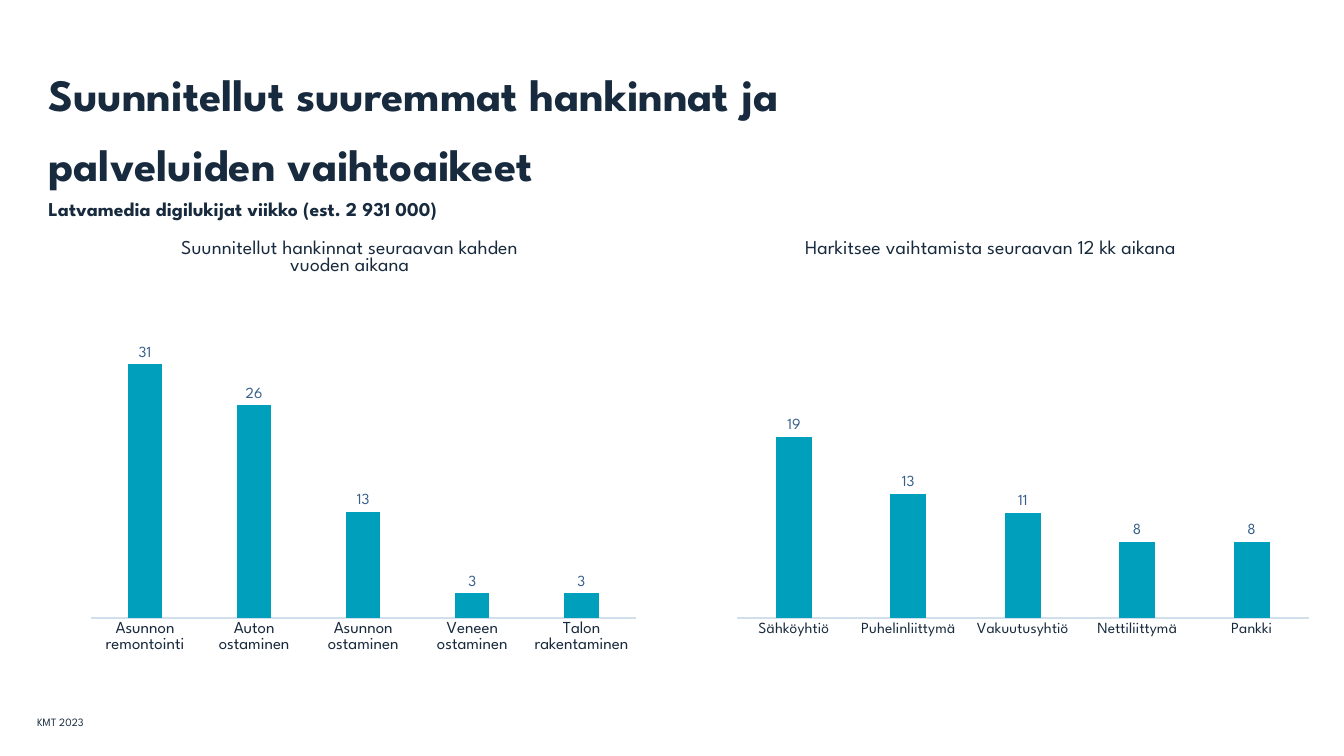
from lxml import etree
from pptx import Presentation
from pptx.chart.data import CategoryChartData
from pptx.dml.color import RGBColor
from pptx.enum.chart import XL_CHART_TYPE, XL_LABEL_POSITION, XL_TICK_MARK
from pptx.enum.text import MSO_ANCHOR, MSO_AUTO_SIZE, PP_ALIGN
from pptx.oxml.ns import qn
from pptx.util import Inches, Pt

COLUMN = XL_CHART_TYPE.COLUMN_CLUSTERED
OUTSIDE = XL_LABEL_POSITION.OUTSIDE_END
NO_TICK = XL_TICK_MARK.NONE
TOP, MIDDLE = MSO_ANCHOR.TOP, MSO_ANCHOR.MIDDLE
NO_FIT = MSO_AUTO_SIZE.NONE
LEFT = PP_ALIGN.LEFT

FACE = "League Spartan"
COLORS = {"ink": "182A3D", "bar": "00A0BD", "label": "365E89", "axis": "D1DFED"}

HEADING = "Suunnitellut suuremmat hankinnat ja \vpalveluiden vaihtoaikeet\v"
SUBHEAD = "Latvamedia digilukijat viikko (est. 2 931 000)"
SOURCE = "KMT 2023"

CHARTS = [
    {
        "title": "Suunnitellut hankinnat seuraavan kahden\vvuoden aikana",
        "left": 0.5, "width": 5.94, "size": 12, "max": 35, "spot": None,
        "data": {
            "Asunnon remontointi": 31,
            "Auton ostaminen": 26,
            "Asunnon ostaminen": 13,
            "Veneen ostaminen": 3,
            "Talon rakentaminen": 3,
        },
    },
    {
        "title": "Harkitsee vaihtamista seuraavan 12 kk aikana",
        "left": 6.89, "width": 6.23, "size": 11, "max": 30,
        "spot": {"xMode": "edge", "yMode": "edge", "x": 0.17, "y": 0.03},
        "data": {
            "Sähköyhtiö": 19,
            "Puhelinliittymä": 13,
            "Vakuutusyhtiö": 11,
            "Nettiliittymä": 8,
            "Pankki": 8,
        },
    },
]
CHART_TOP, CHART_HEIGHT = 2.19, 4.6
PLOT = {"layoutTarget": "inner", "xMode": "edge", "yMode": "edge",
        "x": 0.067, "y": 0.239, "w": 0.911, "h": 0.618}


def color(name):
    return RGBColor.from_string(COLORS[name])


def style(font, size, ink="ink", bold=False):
    font.name = FACE
    font.size = Pt(size)
    font.bold = bold
    font.color.rgb = color(ink)


def set_layout(parent, index, values):
    """Give a chart part a manual layout, placed at the given child index."""
    for old in parent.findall(qn("c:layout")):
        parent.remove(old)
    layout = etree.Element(qn("c:layout"))
    manual = etree.SubElement(layout, qn("c:manualLayout"))
    for name, value in values.items():
        etree.SubElement(manual, qn("c:" + name)).set("val", str(value))
    parent.insert(index, layout)


def add_title(slide):
    title = slide.shapes.title
    title.left, title.top = Inches(0.48), Inches(0.5)
    title.width, title.height = Inches(12.36), Inches(0.81)
    frame = title.text_frame
    frame.margin_left = frame.margin_right = 0
    frame.margin_top = frame.margin_bottom = 0
    frame.auto_size = NO_FIT
    frame.vertical_anchor = TOP
    para = frame.paragraphs[0]
    para.text = HEADING
    para.alignment = LEFT
    para.line_spacing = 1.3
    para.add_run().text = SUBHEAD
    style(para.font, 32, bold=True)
    for run in para.runs:
        style(run.font, 14 if run.text == SUBHEAD else 32, bold=True)


def add_columns(slide, item):
    data = CategoryChartData()
    data.categories = list(item["data"])
    data.add_series("Series 1", list(item["data"].values()))
    chart = slide.shapes.add_chart(
        COLUMN, Inches(item["left"]), Inches(CHART_TOP),
        Inches(item["width"]), Inches(CHART_HEIGHT), data).chart
    style(chart.font, 10)
    chart.has_legend = False

    chart.has_title = True
    head = chart.chart_title.text_frame.paragraphs[0]
    head.text = item["title"]
    style(head.font, 14)
    for run in head.runs:
        style(run.font, 14)
    if item["spot"]:
        set_layout(chart.element.find(".//" + qn("c:title")), 1, item["spot"])
    set_layout(chart.element.find(".//" + qn("c:plotArea")), 0, PLOT)

    axis = chart.category_axis
    axis.major_tick_mark = axis.minor_tick_mark = NO_TICK
    axis.format.line.color.rgb = color("axis")
    axis.format.line.width = Pt(0.75)
    style(axis.tick_labels.font, item["size"])

    scale = chart.value_axis
    scale.minimum_scale, scale.maximum_scale = 0, item["max"]
    scale.has_major_gridlines = False
    scale.visible = False

    plot = chart.plots[0]
    plot.gap_width, plot.overlap = 219, -27
    plot.vary_by_categories = False
    series = plot.series[0]
    series.format.fill.solid()
    series.format.fill.fore_color.rgb = color("bar")
    labels = series.data_labels
    labels.show_value = True
    labels.position = OUTSIDE
    style(labels.font, 11, "label")


def add_source(slide):
    box = slide.shapes.add_textbox(
        Inches(0.27), Inches(6.96), Inches(1.05), Inches(0.4))
    frame = box.text_frame
    frame.word_wrap = True
    frame.vertical_anchor = MIDDLE
    para = frame.paragraphs[0]
    para.text = SOURCE
    style(para.font, 8)


def main():
    deck = Presentation()
    deck.slide_width, deck.slide_height = Inches(13.33), Inches(7.5)
    slide = deck.slides.add_slide(deck.slide_layouts[5])
    add_title(slide)
    for item in CHARTS:
        add_columns(slide, item)
    add_source(slide)
    deck.save("out.pptx")


if __name__ == "__main__":
    main()
